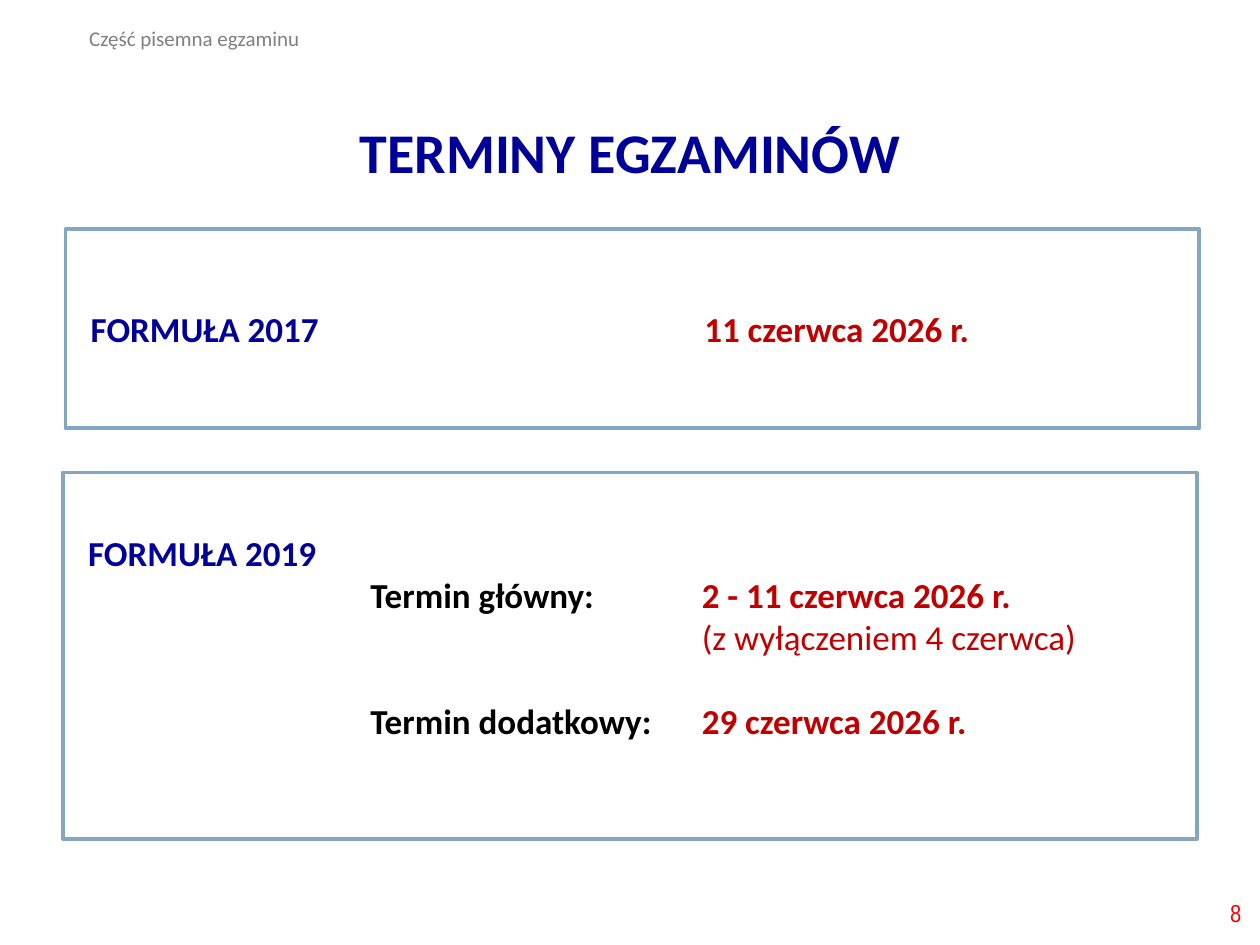
from lxml.etree import SubElement
from pptx import Presentation
from pptx.dml.color import RGBColor
from pptx.enum.shapes import MSO_SHAPE
from pptx.enum.text import MSO_ANCHOR, MSO_AUTO_SIZE, PP_ALIGN
from pptx.oxml.ns import qn
from pptx.util import Inches, Pt

NAVY, RED, BLACK = "000099", "C00000", "000000"
TAB_STOPS = (2.24, 4.87)


def color(value):
    return RGBColor.from_string(value)


class ExamSlide:
    border = "86A5BE"
    face = "Calibri"

    def __init__(self, deck):
        self.slide = deck.slides.add_slide(deck.slide_layouts[5])

    def place(self, shape, box):
        shape.left, shape.top, shape.width, shape.height = map(Inches, box)

    def style(self, paragraph, size, bold=False, ink=None, face=None):
        font = paragraph.font
        font.name, font.size, font.bold = face or self.face, Pt(size), bold
        if ink:
            font.color.rgb = color(ink)

    def title(self, text, box):
        heading = self.slide.shapes.title
        self.place(heading, box)
        frame = heading.text_frame
        frame.text = text
        frame.auto_size = MSO_AUTO_SIZE.NONE
        frame.vertical_anchor = MSO_ANCHOR.MIDDLE
        line = frame.paragraphs[0]
        line.alignment = PP_ALIGN.CENTER
        line.line_spacing = 1.5
        self.style(line, 32, True, NAVY)

    def label(self, text, box, size, ink, face=None, align=PP_ALIGN.LEFT, anchor=MSO_ANCHOR.TOP):
        frame = self.slide.shapes.add_textbox(*map(Inches, box)).text_frame
        frame.word_wrap = True
        frame.vertical_anchor = anchor
        line = frame.paragraphs[0]
        line.text = text
        line.alignment = align
        self.style(line, size, ink=ink, face=face)

    def panel(self, box, lines, anchor, top=0.05):
        outline = self.slide.shapes.add_shape(MSO_SHAPE.RECTANGLE, *map(Inches, box))
        outline.shadow.inherit = False
        outline.fill.background()
        outline.line.color.rgb = color(self.border)
        outline.line.width = Pt(2.25)
        frame = outline.text_frame
        frame.word_wrap = True
        frame.margin_left, frame.margin_top = Inches(0.2), Inches(top)
        frame.vertical_anchor = anchor
        for index, (runs, bold, before) in enumerate(lines):
            line = frame.add_paragraph() if index else frame.paragraphs[0]
            line.alignment = PP_ALIGN.LEFT
            if before:
                line.space_before = Pt(before)
            self.tabs(line)
            self.style(line, 20, bold)
            for text, ink in runs:
                run = line.add_run()
                run.text = text
                run.font.color.rgb = color(ink)

    def tabs(self, line):
        stops = SubElement(line._p.get_or_add_pPr(), qn("a:tabLst"))
        for stop in TAB_STOPS:
            SubElement(stops, qn("a:tab"), pos=str(Inches(stop)), algn="l")


def main():
    deck = Presentation()
    deck.slide_width, deck.slide_height = Inches(10), Inches(7.5)
    exam = ExamSlide(deck)
    exam.title("TERMINY EGZAMINÓW", (0.69, 0.61, 8.62, 0.91))
    exam.panel((0.5, 3.75, 9, 2.91), [
        ([("FORMUŁA 2019", NAVY)], True, 0),
        ([("\tTermin główny:", BLACK), ("\t2 - 11 czerwca 2026 r.", RED)], True, 0),
        ([("\t\t(z wyłączeniem 4 czerwca)", RED)], False, 0),
        ([("\tTermin dodatkowy:", BLACK), ("\t29 czerwca 2026 r.", RED)], True, 24),
    ], MSO_ANCHOR.TOP, top=0.47)
    exam.panel((0.52, 1.82, 9, 1.58), [
        ([("FORMUŁA 2017", NAVY), ("\t\t11 czerwca 2026 r.", RED)], True, 0),
    ], MSO_ANCHOR.MIDDLE)
    exam.label("Część pisemna egzaminu", (0.61, 0.15, 2.67, 0.3), 12, "808080")
    exam.label("8", (7.7, 7.04, 2.25, 0.4), 14, "FF0000", "Arial Narrow",
               PP_ALIGN.RIGHT, MSO_ANCHOR.MIDDLE)
    deck.save("out.pptx")


if __name__ == "__main__":
    main()
